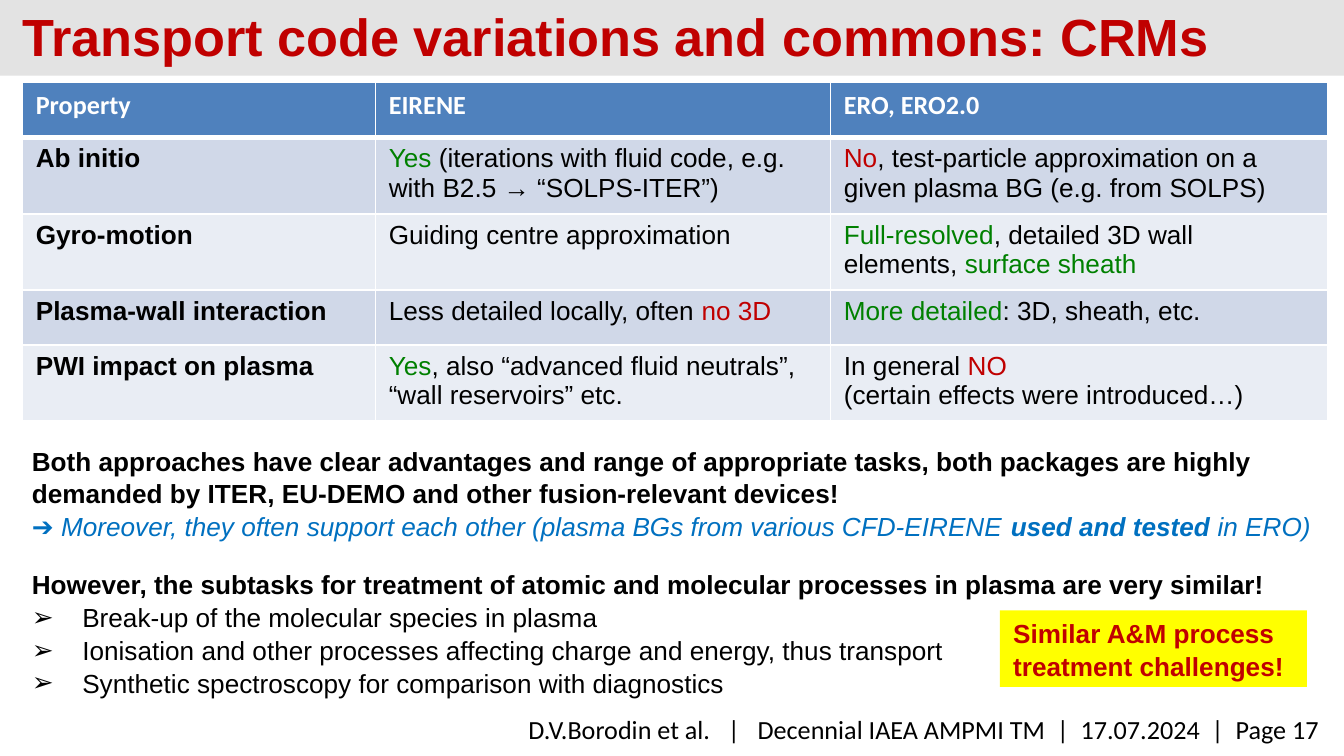
"""Build the slide comparing transport codes and their shared CRM challenges."""
from lxml.etree import SubElement
from pptx import Presentation
from pptx.dml.color import RGBColor as Rgb
from pptx.enum.shapes import MSO_SHAPE as Shape
from pptx.enum.text import MSO_ANCHOR as Anchor, PP_ALIGN as Align
from pptx.oxml import parse_xml
from pptx.oxml.ns import nsdecls, qn
from pptx.util import Pt

COLORS = {
    "black": "000000", "white": "FFFFFF", "red": "C00000", "green": "008000",
    "blue": "0070C0", "header": "4F81BD", "odd": "D0D8E8", "even": "E9EDF4",
    "band": "E3E3E3", "yellow": "FFFF00",
}
BODY = {"name": "Arial", "size": Pt(14), "bold": False, "italic": False, "color": "black"}
BOLD = BODY | {"bold": True}
RED = {"color": "red"}
GREEN = {"color": "green"}


def write(para, spans, style):
    for text, changes in spans:
        span = para.add_run()
        span.text = text
        for name, value in (style | changes).items():
            if name == "color":
                span.font.color.rgb = Rgb.from_string(COLORS[value])
            else:
                setattr(span.font, name, value)


def add_box(page, left, top, width, height, fill=None):
    frame = [Pt(value) for value in (left, top, width, height)]
    if fill:
        box = page.shapes.add_shape(Shape.RECTANGLE, *frame)
        box.shadow.inherit = False
        box.fill.solid()
        box.fill.fore_color.rgb = Rgb.from_string(COLORS[fill])
        box.line.fill.background()
    else:
        box = page.shapes.add_textbox(*frame)
    box.text_frame.word_wrap = True
    return box


deck = Presentation()
deck.slide_width, deck.slide_height = Pt(720), Pt(405)
page = deck.slides.add_slide(deck.slide_layouts[6])

add_box(page, 0, 0, 720, 40.5, "band")

footer = add_box(page, 139, 378.7, 575.3, 24.3).text_frame.paragraphs[0]
footer.alignment = Align.RIGHT
footer_text = "D.V.Borodin et al.   |   Decennial IAEA AMPMI TM  |  17.07.2024  |  Page 17"
write(footer, [(footer_text, {})], BODY | {"name": "Calibri"})

title = add_box(page, 12, 5.8, 648, 26).text_frame
title_format = {"margin_left": 0, "margin_top": 0, "margin_right": 0, "margin_bottom": 0,
                "vertical_anchor": Anchor.MIDDLE}
for name, value in title_format.items():
    setattr(title, name, value)
write(title.paragraphs[0], [("Transport code variations and commons: CRMs", {})],
      BOLD | RED | {"size": Pt(28)})

rows = [
    [[[("Property", {})]], [[("EIRENE", {})]], [[("ERO, ERO2.0", {})]]],
    [[[("Ab initio", {})]],
     [[("Yes ", GREEN), ("(iterations with fluid code, e.g. with B2.5 → “SOLPS-ITER”)", {})]],
     [[("No", RED), (", test-particle approximation on a given plasma BG (e.g. from SOLPS)", {})]]],
    [[[("Gyro-motion", {})]],
     [[("Guiding centre approximation", {})]],
     [[("Full-resolved", GREEN), (", detailed 3D wall elements, ", {}), ("surface sheath", GREEN)]]],
    [[[("Plasma-wall interaction", {})]],
     [[("Less detailed locally, often ", {}), ("no 3D", RED)]],
     [[("More detailed", GREEN), (": 3D, sheath, etc.", {})]]],
    [[[("PWI impact on plasma", {})]],
     [[("Yes", GREEN), (", also “advanced fluid neutrals”, “wall reservoirs” etc.", {})]],
     [[("In general ", {}), ("NO", RED)], [("(certain effects were introduced…)", {})]]],
]
widths = [189.1, 243.8, 266.4]
heights = [29.5, 40.5, 40.5, 29.5, 40.5]
table = page.shapes.add_table(len(rows), len(widths), Pt(12), Pt(44.2),
                              Pt(sum(widths)), Pt(sum(heights))).table
for column, width in zip(table.columns, widths):
    column.width = Pt(width)
for r, (row, height) in enumerate(zip(rows, heights)):
    table.rows[r].height = Pt(height)
    fill = "header" if r == 0 else "odd" if r % 2 else "even"
    for c, paragraphs in enumerate(row):
        cell = table.cell(r, c)
        cell.fill.solid()
        cell.fill.fore_color.rgb = Rgb.from_string(COLORS[fill])
        style = BOLD if c == 0 else BODY
        if r == 0:
            style = BOLD | {"name": "Calibri", "color": "white"}
        for p, spans in enumerate(paragraphs):
            para = cell.text_frame.add_paragraph() if p else cell.text_frame.paragraphs[0]
            write(para, spans, style)
        for place, side in enumerate("LRTB"):
            weight = 3 if (r, side) in [(0, "B"), (1, "T")] else 1
            border = parse_xml(
                f'<a:ln{side} {nsdecls("a")} w="{Pt(weight)}"><a:solidFill>'
                f'<a:srgbClr val="{COLORS["white"]}"/></a:solidFill></a:ln{side}>')
            cell._tc.get_or_add_tcPr().insert(place, border)

blue = {"color": "blue", "italic": True}
lines = [
    ([("Both approaches have clear advantages and range of appropriate tasks, both packages "
       "are highly demanded by ITER, EU-DEMO and other fusion-relevant devices!", {})], BOLD, 0, False),
    ([("➔ Moreover, they often support each other (plasma BGs from various CFD-EIRENE ", {}),
      ("used and tested", {"bold": True}), (" in ERO)", {})], BODY | blue, 0, False),
    ([("However, the subtasks for treatment of atomic and molecular processes in plasma "
       "are very similar!", {})], BOLD, 13.3, False),
    ([("Break-up of the molecular species in plasma", {})], BODY, 0, True),
    ([("Ionisation and other processes affecting charge and energy, thus transport", {})],
     BODY, 0, True),
    ([("Synthetic spectroscopy for comparison with diagnostics", {})], BODY, 0, True),
]
summary = add_box(page, 10, 234, 700.6, 143.3).text_frame
for index, (spans, style, gap, bulleted) in enumerate(lines):
    para = summary.add_paragraph() if index else summary.paragraphs[0]
    para.line_spacing = 1.05
    para.space_before = Pt(gap)
    if bulleted:
        properties = para._p.get_or_add_pPr()
        properties.set("marL", str(Pt(27)))
        properties.set("indent", str(-Pt(27)))
        SubElement(properties, qn("a:buFont"), typeface="Arial")
        SubElement(properties, qn("a:buChar"), char="➢")
    write(para, spans, style)

callout = add_box(page, 535.7, 327, 164.5, 41, "yellow").text_frame.paragraphs[0]
callout.alignment = Align.LEFT
callout.line_spacing = 1.05
write(callout, [("Similar A&M process treatment challenges!", {})], BOLD | RED)

deck.save("out.pptx")
